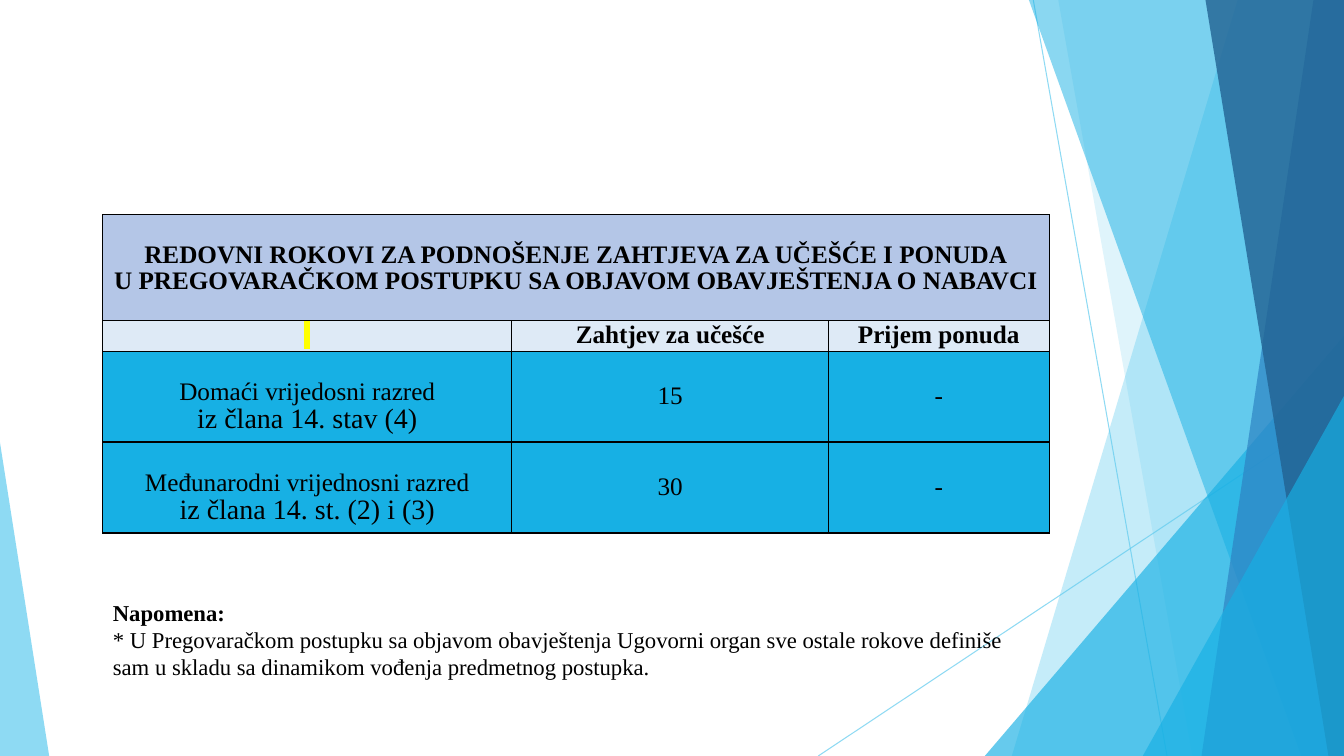
"""Build the slide on regular deadlines in the negotiated procedure."""
from lxml import etree
from pptx import Presentation
from pptx import util as u
from pptx.dml import color
from pptx.enum import shapes, text
from pptx.oxml import ns

WIDTH, HEIGHT = 33.87, 19.05
SKY, CYAN, BLUE, NAVY = "5FCBEF", "17B0E4", "2E83C3", "226292"
HEADING, SUBHEADING, BLACK, YELLOW = "B4C6E7", "DEEAF6", "000000", "FFFF00"


def rgb(value):
    return color.RGBColor.from_string(value)


def add_xml(parent, tag, **attributes):
    return etree.SubElement(parent, ns.qn(tag), **attributes)


class Deck:
    font = "Times New Roman"
    line_spacing = 0.93

    def __init__(self):
        self.presentation = Presentation()
        self.presentation.slide_width = u.Cm(WIDTH)
        self.presentation.slide_height = u.Cm(HEIGHT)
        self.slide = self.presentation.slides.add_slide(self.presentation.slide_layouts[5])

    def set_opacity(self, shape, percent):
        for node in shape.element.iter(ns.qn("a:srgbClr")):
            add_xml(node, "a:alpha", val=str(percent * 1000))

    def paint(self, shape, fill, opacity):
        shape.shadow.inherit = False
        shape.fill.solid()
        shape.fill.fore_color.rgb = rgb(fill)
        shape.line.fill.background()
        self.set_opacity(shape, opacity)

    def line(self, start, end):
        connector = self.slide.shapes.add_connector(
            shapes.MSO_CONNECTOR.STRAIGHT, *(u.Cm(value) for value in start + end))
        connector.line.color.rgb = rgb(SKY)
        connector.line.width = u.Pt(0.75)
        self.set_opacity(connector, 70)
        add_xml(connector.element.spPr, "a:effectLst")

    def right_band(self, top_x, bottom_x, fill, opacity):
        builder = self.slide.shapes.build_freeform(u.Cm(top_x), 0)
        corners = [(WIDTH, 0), (WIDTH, HEIGHT), (bottom_x, HEIGHT)]
        builder.add_line_segments([(u.Cm(x), u.Cm(y)) for x, y in corners])
        self.paint(builder.convert_to_shape(), fill, opacity)

    def triangle(self, left, top, width, apex, fill, opacity):
        shape = self.slide.shapes.add_shape(
            shapes.MSO_SHAPE.ISOSCELES_TRIANGLE,
            u.Cm(left), u.Cm(top), u.Cm(width), u.Cm(HEIGHT - top))
        shape.adjustments[0] = apex
        self.paint(shape, fill, opacity)

    def set_lines(self, frame, lines, spacing, alignment):
        frame.text = "\n".join(content for content, size, bold in lines)
        for paragraph, (content, size, bold) in zip(frame.paragraphs, lines):
            paragraph.alignment = alignment
            paragraph.line_spacing = spacing
            paragraph.font.name = self.font
            paragraph.font.size = u.Pt(size)
            paragraph.font.bold = bold
            paragraph.font.color.rgb = rgb(BLACK)

    def title(self, left, top, width, height, lines):
        title = self.slide.shapes.title
        title.left, title.top = u.Cm(left), u.Cm(top)
        title.width, title.height = u.Cm(width), u.Cm(height)
        frame = title.text_frame
        frame.word_wrap = True
        frame.auto_size = text.MSO_AUTO_SIZE.NONE
        frame.vertical_anchor = text.MSO_ANCHOR.TOP
        self.set_lines(frame, lines, u.Pt(19.3), text.PP_ALIGN.LEFT)
        title.element.getparent().append(title.element)

    def cell(self, cell, lines, fill, top_margin):
        cell.margin_left = cell.margin_right = u.Cm(0.18)
        cell.margin_top, cell.margin_bottom = u.Cm(top_margin), 0
        cell.vertical_anchor = text.MSO_ANCHOR.TOP if top_margin else text.MSO_ANCHOR.MIDDLE
        self.set_lines(cell.text_frame, lines, self.line_spacing, text.PP_ALIGN.CENTER)
        properties = cell._tc.get_or_add_tcPr()
        for side in "LRTB":
            border = add_xml(properties, f"a:ln{side}", w=str(u.Pt(1)))
            add_xml(add_xml(border, "a:solidFill"), "a:srgbClr", val=BLACK)
        cell.fill.solid()
        cell.fill.fore_color.rgb = rgb(fill)

    def highlight(self, cell, fill):
        run = cell.text_frame.paragraphs[0].runs[0]
        mark = add_xml(run.font._element, "a:highlight")
        add_xml(mark, "a:srgbClr", val=fill)

    def table(self, left, top, widths, heights, rows, fills):
        table = self.slide.shapes.add_table(
            len(heights), len(widths), u.Cm(left), u.Cm(top),
            u.Cm(sum(widths)), u.Cm(sum(heights))).table
        table.first_row = table.horz_banding = False
        for column, width in zip(table.columns, widths):
            column.width = u.Cm(width)
        for row, height in zip(table.rows, heights):
            row.height = u.Cm(height)
        for row, contents, fill in zip(table.rows, rows, fills):
            for cell, lines in zip(row.cells, contents):
                self.cell(cell, lines, fill, 0.71 if len(lines) > 1 else 0)
        table.cell(0, 0).merge(table.cell(0, len(widths) - 1))
        return table


def main():
    deck = Deck()
    deck.line((26.04, 0), (29.41, HEIGHT))
    deck.line((WIDTH, 10.24), (20.62, HEIGHT))
    deck.right_band(31.19, 25.5, SKY, 36)
    deck.right_band(26.67, 30.05, SKY, 20)
    deck.triangle(24.82, 8.46, 9.05, 1, CYAN, 66)
    deck.right_band(25.93, 32.79, CYAN, 50)
    deck.right_band(33.1, 30.28, BLUE, 70)
    deck.right_band(30.38, 33.48, NAVY, 80)
    deck.triangle(28.8, 9.98, 5.07, 1, CYAN, 66)
    deck.triangle(0, 11.15, 1.24, 0, SKY, 70)

    deck.title(2.59, 14.96, 23.19, 2.79, [
        ("Napomena:", 16.2, True),
        ("* U Pregovaračkom postupku sa objavom obavještenja Ugovorni organ sve ostale "
         "rokove definiše sam u skladu sa dinamikom vođenja predmetnog postupka.", 16.2, False),
    ])

    heading = [
        ("REDOVNI ROKOVI ZA PODNOŠENJE ZAHTJEVA ZA UČEŠĆE I PONUDA", 18, True),
        ("U PREGOVARAČKOM POSTUPKU SA OBJAVOM OBAVJEŠTENJA O NABAVCI", 18, True),
    ]
    labels = [chr(160), "Zahtjev za učešće", "Prijem ponuda"]
    deadlines = [
        ("Domaći vrijedosni razred", "iz člana 14. stav (4)", "15", "-"),
        ("Međunarodni vrijednosni razred", "iz člana 14. st. (2) i (3)", "30", "-"),
    ]
    rows = [[heading, [], []], [[(label, 18, True)] for label in labels]]
    for category, article, request, offer in deadlines:
        rows.append([[(category, 18, False), (article, 20, False)],
                     [(request, 18, False)], [(offer, 18, False)]])
    table = deck.table(2.59, 5.41, [10.31, 7.98, 5.56], [2.67, 0.77, 2.29, 2.29],
                       rows, [HEADING, SUBHEADING, CYAN, CYAN])
    deck.highlight(table.cell(1, 0), YELLOW)
    deck.presentation.save("out.pptx")


if __name__ == "__main__":
    main()
